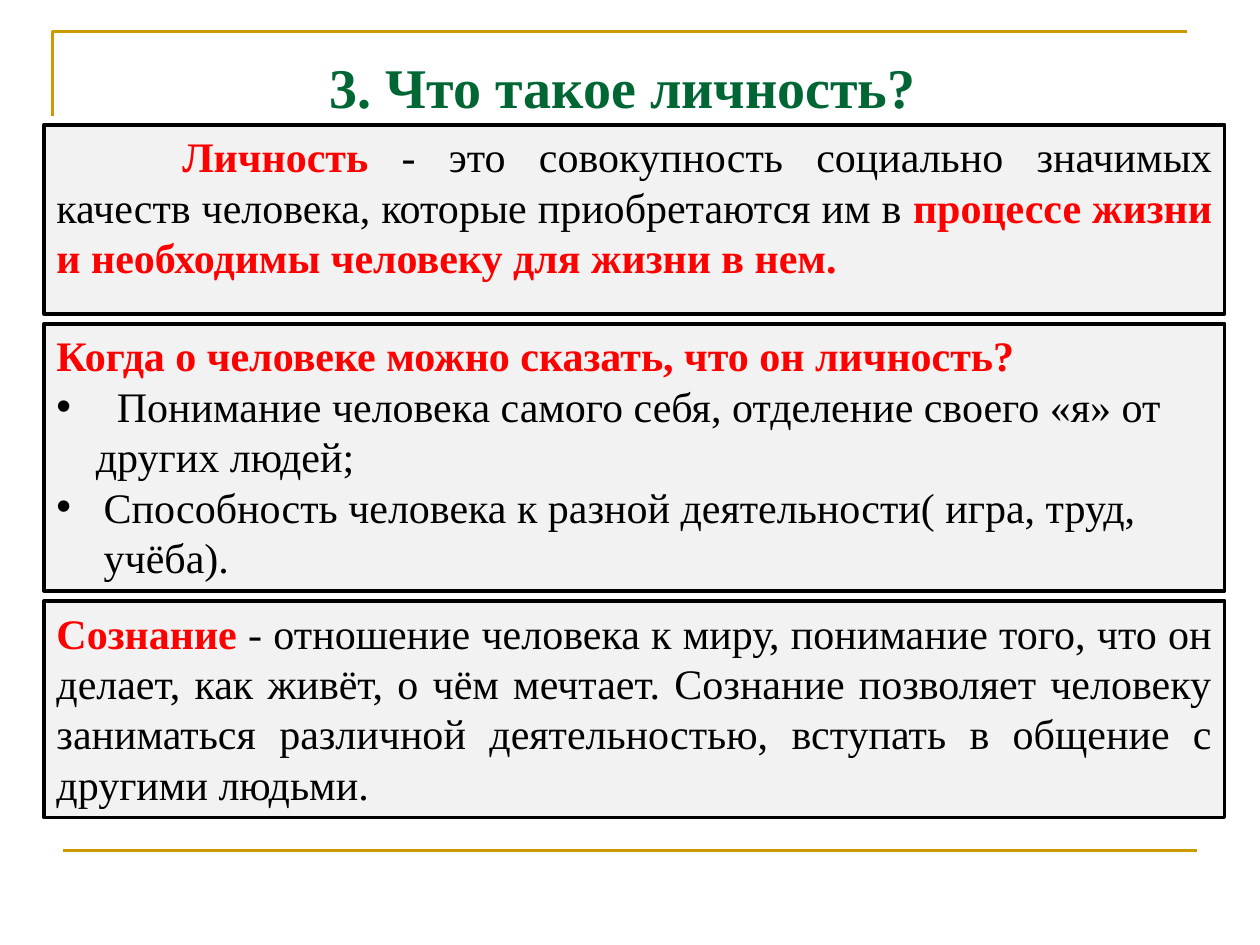
"""Build a slide that defines personality and consciousness."""
import pptx
import pptx.dml.color
import pptx.enum.shapes
import pptx.enum.text
import pptx.oxml
import pptx.util
from lxml import etree

Pt = pptx.util.Pt
RGBColor = pptx.dml.color.RGBColor
ALIGN = pptx.enum.text.PP_ALIGN
ANCHOR = pptx.enum.text.MSO_ANCHOR

GOLD = RGBColor(0xCC, 0x99, 0x00)
GREEN = RGBColor(0x00, 0x66, 0x33)
RED = RGBColor(0xFF, 0x00, 0x00)
BLACK = RGBColor(0x00, 0x00, 0x00)
PALE = RGBColor(0xF2, 0xF2, 0xF2)

TITLE = "3. Что такое личность?"
PERSONALITY = [
    {"runs": [
        ("Личность", True),
        (" - это совокупность социально значимых качеств человека, "
         "которые приобретаются им в ", False),
        ("процессе жизни и необходимы человеку для жизни в нем.", True)],
     "align": ALIGN.JUSTIFY, "indent": 72, "before": 8},
]
SIGNS = [
    {"runs": [("Когда о человеке можно сказать, что он личность?", True)]},
    {"runs": [("  Понимание человека самого себя, отделение своего «я» от "
               "других людей;", False)],
     "margin": 22.5, "indent": -22.5, "bullet": "•"},
    {"runs": [("Способность человека к разной деятельности( игра, труд, "
               "учёба).", False)],
     "margin": 27, "indent": -27, "bullet": "•"},
]
CONSCIOUSNESS = [
    {"runs": [
        ("Сознание", True),
        (" - отношение человека к миру, понимание того, что он делает, как "
         "живёт, о чём мечтает. Сознание позволяет человеку заниматься "
         "различной деятельностью, вступать в общение с другими людьми.",
         False)],
     "align": ALIGN.JUSTIFY},
]
BOX_LEFT, BOX_WIDTH = 25.2, 674.6
BOXES = [(71.3, 108, PERSONALITY), (185, 152.6, SIGNS), (343.4, 123.8, CONSCIOUSNESS)]
CORNER = [(30.2, 66.2), (30.2, 18), (678.2, 18)]
FOOTER_LINE = (36, 486, 684, 486)


def add_text(paragraph, text, *, size=24, color=BLACK, bold=False):
    run = paragraph.add_run()
    run.text = text
    run.font.name = "Times New Roman"
    run.font.size = Pt(size)
    run.font.bold = bold
    run.font.color.rgb = color


def format_paragraph(paragraph, align=ALIGN.LEFT, margin=0, indent=0, before=0, bullet=None):
    paragraph.alignment = align
    paragraph.space_before = Pt(before)
    properties = paragraph._p.get_or_add_pPr()
    properties.set("marL", str(Pt(margin)))
    properties.set("indent", str(Pt(indent)))
    if bullet:
        font = etree.SubElement(properties, pptx.oxml.ns.qn("a:buFont"))
        font.set("typeface", "Arial")
        mark = etree.SubElement(properties, pptx.oxml.ns.qn("a:buChar"))
        mark.set("char", bullet)


def add_box(slide, top, height, content):
    box = slide.shapes.add_shape(
        pptx.enum.shapes.MSO_SHAPE.RECTANGLE,
        Pt(BOX_LEFT), Pt(top), Pt(BOX_WIDTH), Pt(height))
    box.shadow.inherit = False
    box.fill.solid()
    box.fill.fore_color.rgb = PALE
    box.line.color.rgb = BLACK
    box.line.width = Pt(2.25)
    frame = box.text_frame
    frame.word_wrap = True
    frame.vertical_anchor = ANCHOR.TOP
    for index, item in enumerate(content):
        paragraph = frame.add_paragraph() if index else frame.paragraphs[0]
        layout = {key: value for key, value in item.items() if key != "runs"}
        format_paragraph(paragraph, **layout)
        for text, strong in item["runs"]:
            add_text(paragraph, text, bold=strong, color=RED if strong else BLACK)


def add_frame_lines(slide):
    builder = slide.shapes.build_freeform(*map(Pt, CORNER[0]), scale=1.0)
    builder.add_line_segments([(Pt(x), Pt(y)) for x, y in CORNER[1:]], close=False)
    corner = builder.convert_to_shape()
    corner.shadow.inherit = False
    corner.fill.background()
    footer = slide.shapes.add_connector(
        pptx.enum.shapes.MSO_CONNECTOR.STRAIGHT, *map(Pt, FOOTER_LINE))
    etree.SubElement(footer._element.spPr, pptx.oxml.ns.qn("a:effectLst"))
    for shape in (corner, footer):
        shape.line.color.rgb = GOLD
        shape.line.width = Pt(1.5)


def main():
    presentation = pptx.Presentation()
    presentation.slide_width, presentation.slide_height = Pt(720), Pt(540)
    slide = presentation.slides.add_slide(presentation.slide_layouts[5])
    add_frame_lines(slide)
    title = slide.shapes.title
    title.left, title.top, title.width, title.height = Pt(32), Pt(21.6), Pt(648), Pt(55.4)
    title.text_frame.vertical_anchor = ANCHOR.MIDDLE
    paragraph = title.text_frame.paragraphs[0]
    paragraph.alignment = ALIGN.CENTER
    add_text(paragraph, TITLE, size=32, color=GREEN, bold=True)
    for top, height, content in BOXES:
        add_box(slide, top, height, content)
    presentation.save("out.pptx")


if __name__ == "__main__":
    main()
